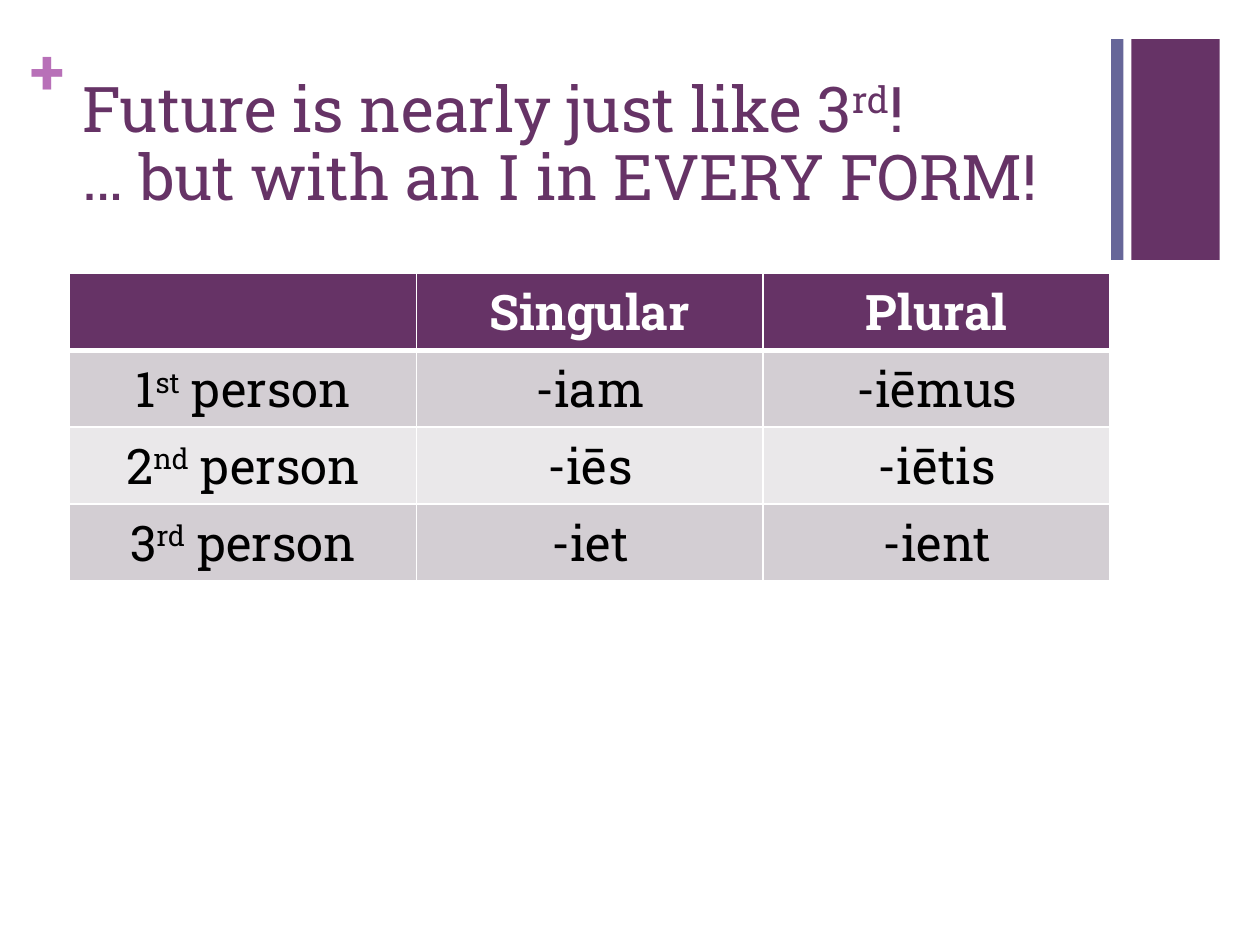
import pptx
import pptx.dml.color
import pptx.enum.shapes
import pptx.enum.text
import pptx.oxml.ns
import pptx.util
from lxml import etree
from pptx.util import Cm, Pt

FONT = "Roboto Slab"
COLORS = {
    "plum": "663366",
    "slate": "666699",
    "orchid": "B870B8",
    "band_dark": "D3CED3",
    "band_light": "EAE8EA",
    "white": "FFFFFF",
    "black": "000000",
}
ENDINGS = [
    ["", "Singular", "Plural"],
    ["1^st^ person", "-iam", "-iēmus"],
    ["2^nd^ person", "-iēs", "-iētis"],
    ["3^rd^ person", "-iet", "-ient"],
]


def rgb(name):
    return pptx.dml.color.RGBColor.from_string(COLORS[name])


def write(para, text, size, color, bold=False):
    """Fill a paragraph; text between ^ marks is superscript."""
    para.font.name = FONT
    para.font.size = Pt(size)
    para.font.bold = bold
    para.font.color.rgb = rgb(color)
    for index, part in enumerate(text.split("^")):
        if not part:
            continue
        span = para.add_run()
        span.text = part
        if index % 2:
            span._r.get_or_add_rPr().set("baseline", "30000")


def add_bar(page, left, top, width, height, color):
    bar = page.shapes.add_shape(
        pptx.enum.shapes.MSO_SHAPE.RECTANGLE, left, top, width, height)
    bar.shadow.inherit = False
    bar.fill.solid()
    bar.fill.fore_color.rgb = rgb(color)
    bar.line.fill.background()


def add_corner(page, left, top, width, height):
    """Narrow slate bar beside a wide plum block."""
    block = Cm(1.78)
    add_bar(page, left + width - block, top, block, height, "plum")
    add_bar(page, left, top, Cm(0.25), height, "slate")


def add_plus(page, left, top, width, height):
    box = page.shapes.add_textbox(left, top, width, height)
    frame = box.text_frame
    frame.margin_left = frame.margin_right = 0
    frame.margin_top = frame.margin_bottom = 0
    write(frame.paragraphs[0], "+", 36, "orchid", bold=True)


def add_title(page, left, top, width, height):
    title = page.shapes.title
    title.left, title.top, title.width, title.height = left, top, width, height
    frame = title.text_frame
    frame.word_wrap = True
    frame.auto_size = pptx.enum.text.MSO_AUTO_SIZE.NONE
    frame.vertical_anchor = pptx.enum.text.MSO_ANCHOR.TOP
    frame.margin_top = Cm(0.23)
    para = frame.paragraphs[0]
    para.alignment = pptx.enum.text.PP_ALIGN.LEFT
    para.line_spacing = 0.9
    write(para, "Future is nearly just like 3^rd^!", 36, "plum")
    para.add_line_break()
    para.add_run().text = "… but with an I in EVERY FORM!"


def set_borders(cell, top, bottom):
    """White cell borders, widths in points."""
    properties = cell._tc.get_or_add_tcPr()
    for side, width in (("L", 1), ("R", 1), ("T", top), ("B", bottom)):
        line = etree.SubElement(
            properties, pptx.oxml.ns.qn("a:ln" + side), w=str(Pt(width)))
        fill = etree.SubElement(line, pptx.oxml.ns.qn("a:solidFill"))
        etree.SubElement(
            fill, pptx.oxml.ns.qn("a:srgbClr"), val=COLORS["white"])


def add_endings(page, left, top, width, height):
    table = page.shapes.add_table(
        len(ENDINGS), len(ENDINGS[0]), left, top, width, height).table
    for r, texts in enumerate(ENDINGS):
        header = r == 0
        if header:
            shade = "plum"
        else:
            shade = "band_dark" if r % 2 else "band_light"
        for c, text in enumerate(texts):
            cell = table.cell(r, c)
            set_borders(cell, 3 if r == 1 else 1, 3 if header else 1)
            cell.fill.solid()
            cell.fill.fore_color.rgb = rgb(shade)
            para = cell.text_frame.paragraphs[0]
            para.alignment = pptx.enum.text.PP_ALIGN.CENTER
            write(para, text, 28, "white" if header else "black", header)


def main():
    deck = pptx.Presentation()
    deck.slide_width, deck.slide_height = Cm(25.4), Cm(19.05)
    page = deck.slides.add_slide(deck.slide_layouts[5])

    # Decoration
    add_corner(page, Cm(22.4), Cm(0.79), Cm(2.19), Cm(4.45))
    add_plus(page, Cm(0.61), Cm(0.64), Cm(0.74), Cm(1.55))

    # Title and table share the left edge and width
    left, width = Cm(1.4), Cm(20.98)
    add_title(page, left, Cm(1.35), width, Cm(3.1))
    add_endings(page, left, Cm(5.51), width, Cm(6.2))

    deck.save("out.pptx")


if __name__ == "__main__":
    main()
